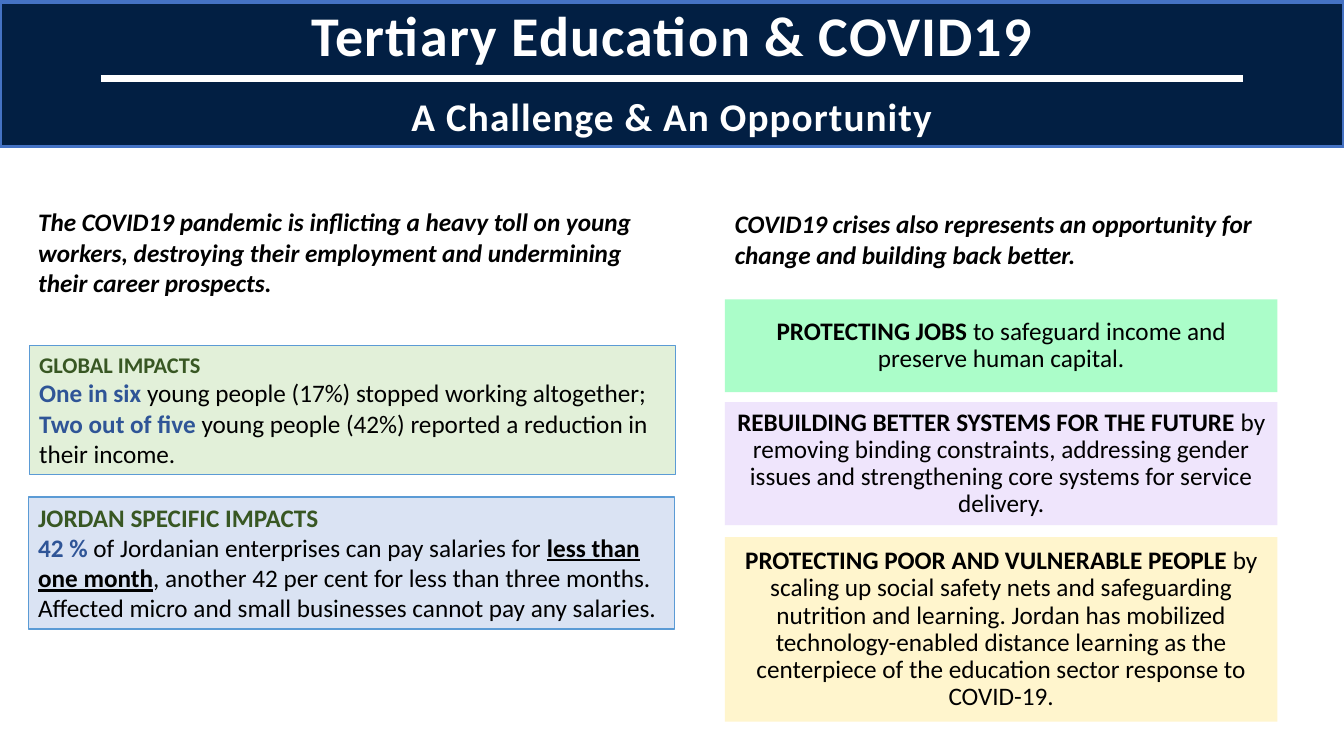
from pptx import Presentation
from pptx.dml.color import RGBColor
from pptx.enum.shapes import MSO_CONNECTOR, MSO_SHAPE
from pptx.enum.text import MSO_ANCHOR, MSO_AUTO_SIZE, PP_ALIGN
from pptx.oxml.ns import qn
from pptx.util import Inches, Pt
from lxml.etree import SubElement

COLORS = {
    "navy": "021F43", "banner_edge": "4472C4", "white": "FFFFFF", "black": "000000",
    "impact_edge": "5B9BD5", "global": "E2F0D9", "jordan": "DAE3F3",
    "heading": "385723", "figure": "2F5597",
    "jobs": "ABFDC9", "systems": "EFE5FC", "people": "FFF5CD",
}
HEADING = {"color": "heading", "bold": True}
FIGURE = {"color": "figure", "bold": True}
STRONG = {"bold": True}
STRESSED = {"bold": True, "underline": True}
LEAD = {"bold": True, "italic": True}
PLAIN = {}

GLOBAL_IMPACTS = [
    [("GLOBAL IMPACTS", {**HEADING, "size": 16})],
    [("One in six ", FIGURE), ("young people (17%) stopped working altogether;", PLAIN)],
    [("Two out of five ", FIGURE),
     ("young people (42%) reported a reduction in their income.", PLAIN)],
]
JORDAN_IMPACTS = [
    [("JORDAN SPECIFIC IMPACTS", HEADING)],
    [("42 % ", FIGURE),
     ("of Jordanian enterprises can pay salaries for ", PLAIN),
     ("less than one month", STRESSED),
     (", another 42 per cent for less than three months. Affected micro and small "
      "businesses cannot pay any salaries.", PLAIN)],
]
OPPORTUNITIES = [
    ("jobs", 2.97, 0.92, "PROTECTING JOBS",
     " to safeguard income and preserve human capital."),
    ("systems", 3.99, 1.22, "REBUILDING BETTER SYSTEMS FOR THE FUTURE",
     " by removing binding constraints, addressing gender issues and strengthening "
     "core systems for service delivery."),
    ("people", 5.33, 1.83, "PROTECTING POOR AND VULNERABLE PEOPLE",
     " by scaling up social safety nets and safeguarding nutrition and learning. "
     "Jordan has mobilized technology-enabled distance learning as the centerpiece "
     "of the education sector response to COVID-19."),
]


def rgb(name):
    return RGBColor.from_string(COLORS[name])


def paint(shape, fill, edge=None, edge_width=1):
    shape.fill.solid()
    shape.fill.fore_color.rgb = rgb(fill)
    if edge:
        shape.line.color.rgb = rgb(edge)
        shape.line.width = Pt(edge_width)
    else:
        shape.line.fill.background()


def set_margins(frame, side, vertical):
    frame.margin_left = frame.margin_right = Inches(side)
    frame.margin_top = frame.margin_bottom = Inches(vertical)


def add_run(paragraph, text, size=18, color="black", bold=False, italic=None, underline=None):
    run = paragraph.add_run()
    run.text = text
    font = run.font
    font.name, font.size, font.bold = "Calibri", Pt(size), bold
    font.italic, font.underline = italic, underline
    font.color.rgb = rgb(color)
    return run


def write(frame, paragraphs, align=PP_ALIGN.LEFT, spacings=(1,), anchor=MSO_ANCHOR.TOP):
    frame.word_wrap = True
    frame.auto_size = MSO_AUTO_SIZE.NONE
    frame.vertical_anchor = anchor
    for index, runs in enumerate(paragraphs):
        paragraph = frame.paragraphs[0] if index == 0 else frame.add_paragraph()
        paragraph.alignment = align
        paragraph.line_spacing = spacings[index % len(spacings)]
        for text, style in runs:
            add_run(paragraph, text, **style)


def add_panel(slide, left, top, width, height, fill, edge=None):
    panel = slide.shapes.add_shape(
        MSO_SHAPE.RECTANGLE, Inches(left), Inches(top), Inches(width), Inches(height))
    panel.shadow.inherit = False
    paint(panel, fill, edge)
    return panel


def add_lead(slide, left, top, width, height, text):
    lead = slide.shapes.add_textbox(Inches(left), Inches(top), Inches(width), Inches(height))
    write(lead.text_frame, [[(text, LEAD)]])


def add_banner(slide, left, top, width, height):
    banner = slide.shapes.title
    banner.left, banner.top = Inches(left), Inches(top)
    banner.width, banner.height = Inches(width), Inches(height)
    paint(banner, "navy", "banner_edge", 2.25)
    set_margins(banner.text_frame, 0.07, 0.04)
    title_style = {"color": "white", "bold": True}
    write(banner.text_frame,
          [[("Tertiary Education & COVID19", {**title_style, "size": 40})],
           [("A Challenge & An Opportunity", {**title_style, "size": 28})]],
          PP_ALIGN.CENTER, (0.9, 1.5), MSO_ANCHOR.MIDDLE)
    for paragraph in banner.text_frame.paragraphs:
        for run in paragraph.runs:
            run.font._element.set("spc", "80")

    rule_y = Inches(top + 0.76)
    rule = slide.shapes.add_connector(
        MSO_CONNECTOR.STRAIGHT, Inches(left + 1), rule_y, Inches(left + width - 1), rule_y)
    rule.line.color.rgb = rgb("white")
    rule.line.width = Pt(5)
    SubElement(rule._element.spPr, qn("a:effectLst"))


def add_challenge(slide, left, top, width):
    add_lead(slide, left, top, width, 1.01,
             "The COVID19 pandemic is inflicting a heavy toll on young workers, "
             "destroying their employment and undermining their career prospects.")
    for offset, drop, height, fill, paragraphs in (
            (0.01, 1.43, 1.28, "global", GLOBAL_IMPACTS),
            (0, 2.93, 1.31, "jordan", JORDAN_IMPACTS)):
        impact = add_panel(slide, left + offset, top + drop, width - 0.02, height,
                           fill, "impact_edge")
        write(impact.text_frame, paragraphs)


def add_opportunity(slide, left, top, width):
    add_lead(slide, left, top, width + 0.22, 0.71,
             "COVID19 crises also represents an opportunity for change and building back better.")
    for fill, panel_top, height, action, detail in OPPORTUNITIES:
        panel = add_panel(slide, left, panel_top, width, height, fill)
        set_margins(panel.text_frame, 0.08, 0.08)
        write(panel.text_frame, [[(action, STRONG), (detail, PLAIN)]],
              PP_ALIGN.CENTER, (0.9,), MSO_ANCHOR.MIDDLE)


def main():
    deck = Presentation()
    deck.slide_width, deck.slide_height = Inches(13.33), Inches(7.5)
    slide = deck.slides.add_slide(deck.slide_layouts.get_by_name("Title Only"))
    add_banner(slide, 0, 0.02, 13.33, 1.43)
    add_challenge(slide, 0.28, 2, 6.43)
    add_opportunity(slide, 7.19, 2.02, 5.48)
    deck.save("out.pptx")


if __name__ == "__main__":
    main()
